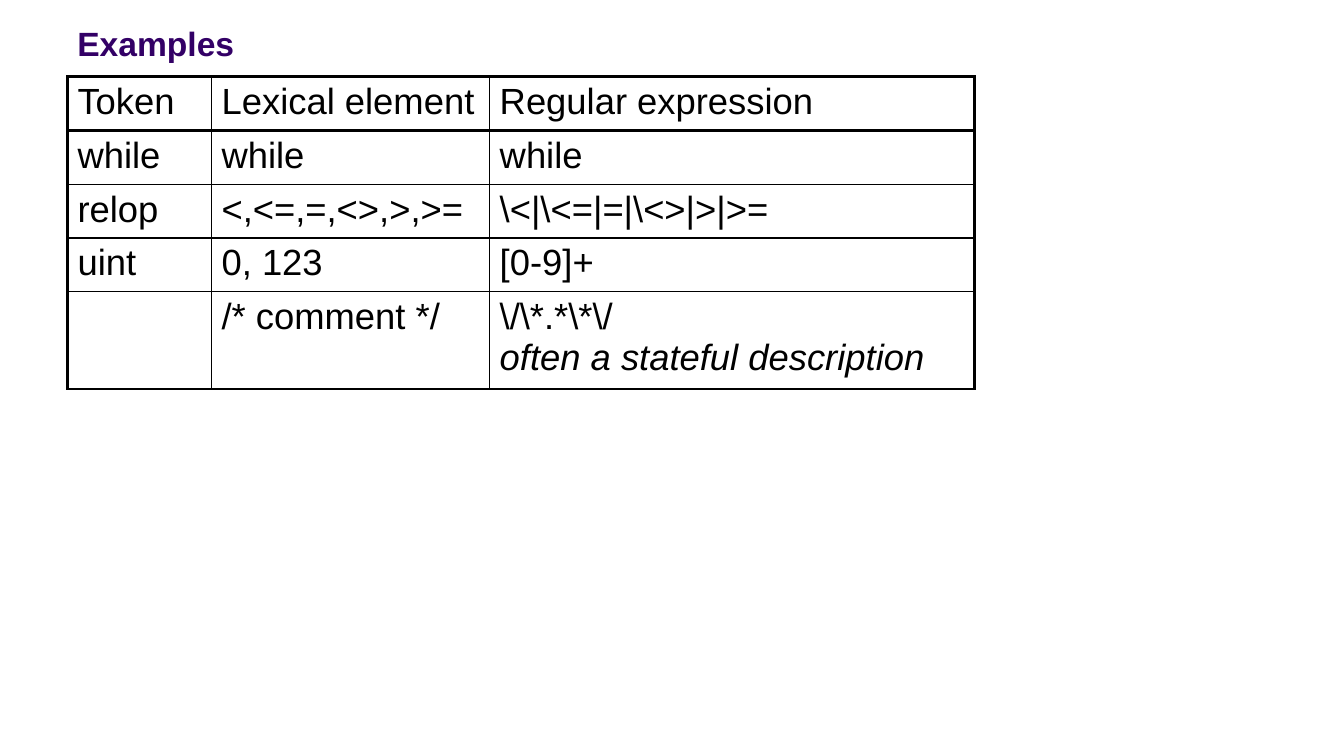
import pptx
import pptx.dml.color
import pptx.enum.text
import pptx.oxml
import pptx.oxml.ns
import pptx.util
from pptx.util import Cm

INK = "000000"
TITLE_FORMAT = {"name": "Arial", "size": pptx.util.Pt(24), "bold": True}
CELL_FORMAT = {"name": "Arial", "size": pptx.util.Pt(26), "bold": False}
THICK, THIN = 2.25, 1

COLUMN_WIDTHS = [3.63, 7.01, 12.22]
ROW_HEIGHTS = [1.28, 1.28, 1.28, 1.28, 2.32]
# Each line of a cell after the first is a remark in italics
TOKEN_ROWS = [
    ["Token", "Lexical element", "Regular expression"],
    ["while", "while", "while"],
    ["relop", "<,<=,=,<>,>,>=", r"\<|\<=|=|\<>|>|>="],
    ["uint", "0, 123", "[0-9]+"],
    ["", "/* comment */", "\\/\\*.*\\*\\/\noften a stateful description"],
]


def color(hex_string):
    return pptx.dml.color.RGBColor.from_string(hex_string)


def add_run(paragraph, text, font_format, hex_string):
    run = paragraph.add_run()
    run.text = text
    for name, value in font_format.items():
        setattr(run.font, name, value)
    run.font.color.rgb = color(hex_string)
    return run


def set_borders(cell, widths):
    """Draw the cell's edges; borders must come before the fill."""
    properties = cell._tc.get_or_add_tcPr()
    for position, (edge, width) in enumerate(widths.items()):
        line = pptx.oxml.parse_xml(
            f'<a:{edge} {pptx.oxml.ns.nsdecls("a")} w="{pptx.util.Pt(width)}">'
            f'<a:solidFill><a:srgbClr val="{INK}"/></a:solidFill></a:{edge}>')
        properties.insert(position, line)


def add_title(slide, left, top, width, height):
    shape = slide.shapes.add_textbox(left, top, width, height)
    frame = shape.text_frame
    frame.word_wrap = True
    frame.vertical_anchor = pptx.enum.text.MSO_ANCHOR.BOTTOM
    add_run(frame.paragraphs[0], "Examples", TITLE_FORMAT, "330066")


def fill_cell(cell, text):
    cell.fill.background()
    paragraph = cell.text_frame.paragraphs[0]
    if not text:
        paragraph.font.size = CELL_FORMAT["size"]
        return
    for index, line in enumerate(text.split("\n")):
        if index:
            paragraph.add_line_break()
        run = add_run(paragraph, line, CELL_FORMAT, INK)
        if index:
            run.font.italic = True


def add_token_table(slide, left, top, width, height):
    last_row, last_column = len(ROW_HEIGHTS) - 1, len(COLUMN_WIDTHS) - 1
    table = slide.shapes.add_table(
        last_row + 1, last_column + 1, left, top, width, height).table
    table.first_row = table.horz_banding = False
    for column, column_width in zip(table.columns, COLUMN_WIDTHS):
        column.width = Cm(column_width)
    for row, row_height in zip(table.rows, ROW_HEIGHTS):
        row.height = Cm(row_height)

    # Thick frame and header rule, thin inner lines
    for r, texts in enumerate(TOKEN_ROWS):
        for c, text in enumerate(texts):
            cell = table.cell(r, c)
            fill_cell(cell, text)
            set_borders(cell, {
                "lnL": THICK if c == 0 else THIN,
                "lnR": THICK if c == last_column else THIN,
                "lnT": THICK if r <= 1 else THIN,
                "lnB": THICK if r in (0, last_row) else THIN,
            })


def main():
    presentation = pptx.Presentation()
    presentation.slide_width, presentation.slide_height = Cm(33.87), Cm(19.05)
    slide = presentation.slides.add_slide(presentation.slide_layouts[6])
    add_title(slide, Cm(1.7), Cm(0.33), Cm(27.94), Cm(1.4))
    add_token_table(slide, Cm(1.7), Cm(1.93),
                    Cm(sum(COLUMN_WIDTHS)), Cm(sum(ROW_HEIGHTS)))
    presentation.save("out.pptx")


if __name__ == "__main__":
    main()
